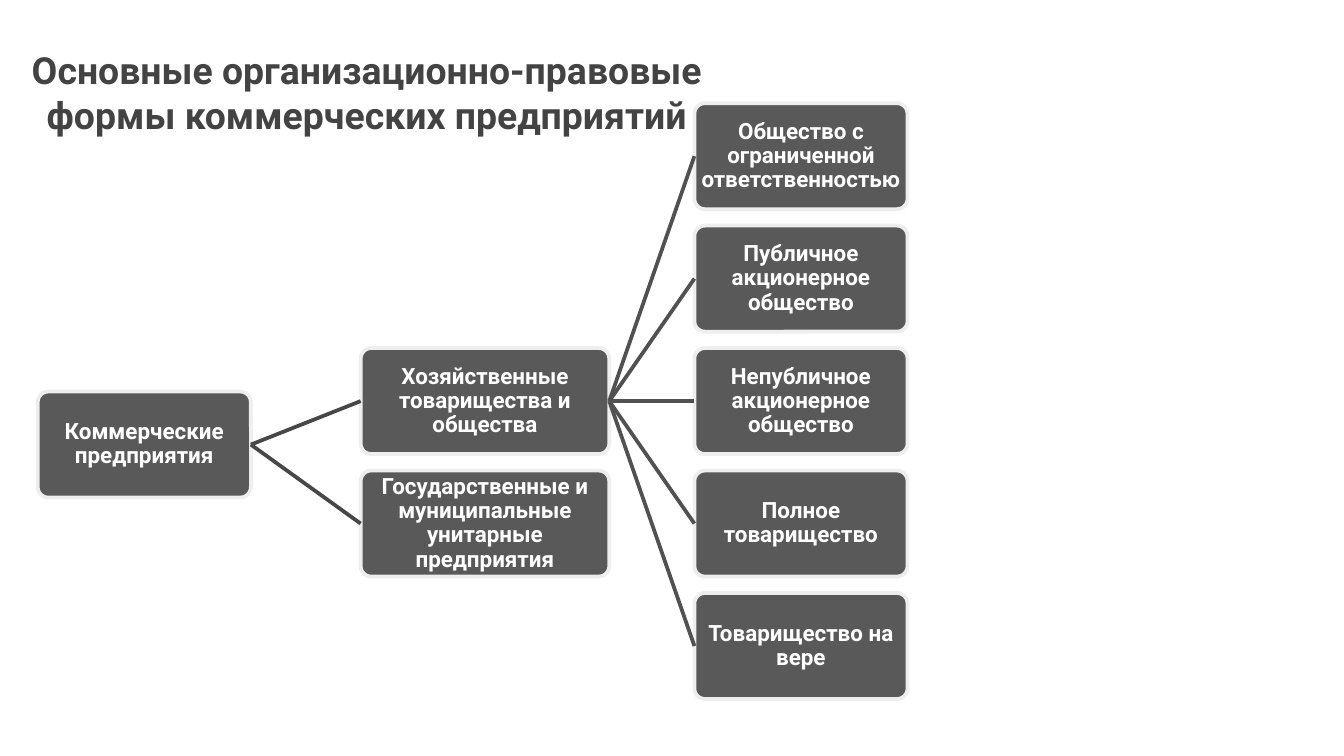
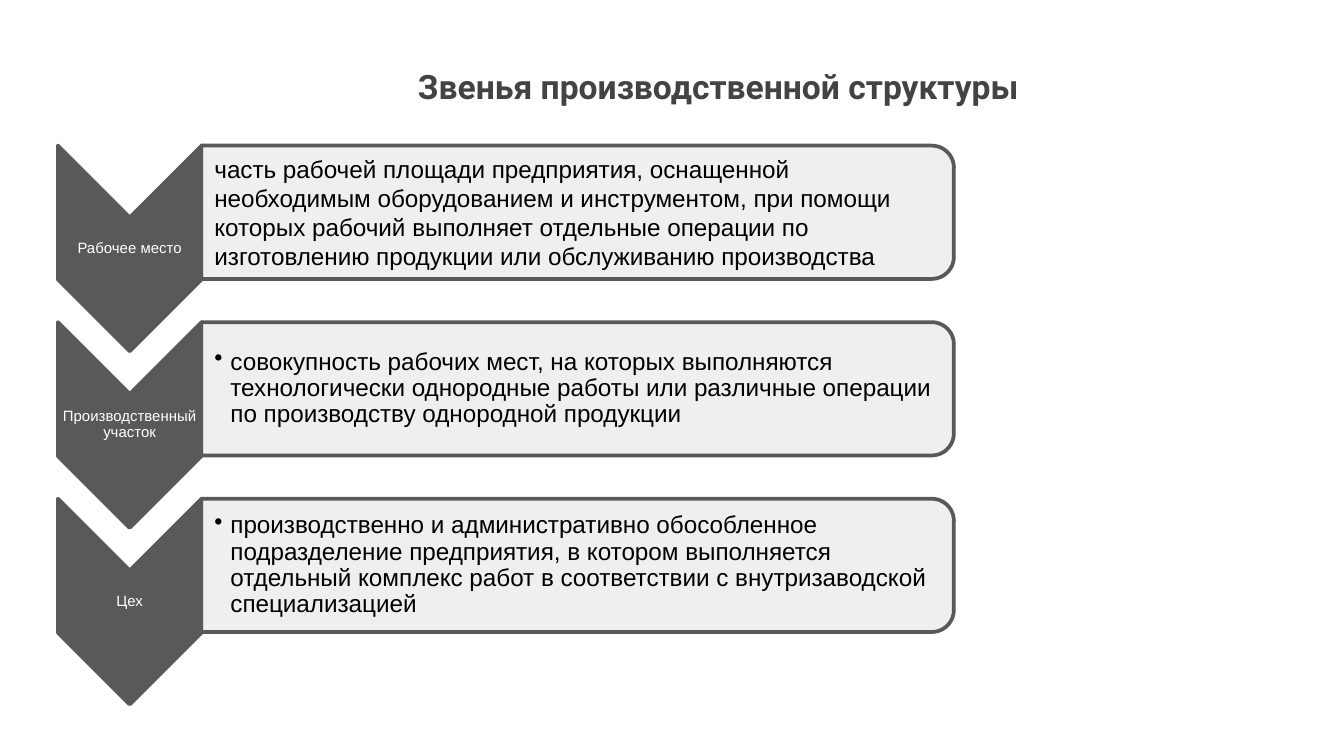
"""Builds two slides on the forms and the structure of enterprises."""
from dataclasses import dataclass

from lxml import etree
from pptx import Presentation
from pptx import util as u
from pptx.dml.color import RGBColor
from pptx.enum import shapes, text
from pptx.oxml import ns

Pt = u.Pt
Kind = shapes.MSO_SHAPE
Mid = text.PP_ALIGN.CENTER


@dataclass(frozen=True)
class Theme:
    dark: str = "595959"
    pale: str = "EEEEEE"
    head: str = "434343"
    ink: str = "000000"
    white: str = "FFFFFF"
    near: str = "474747"
    far: str = "515151"
    bold: str = "Roboto"
    plain: str = "Arial"
    node: int = 12
    body: int = 13
    tag: int = 8
    line: int = 2
    pad: float = 0.7
    tight: float = 0.9


def rgb(code):
    return RGBColor.from_string(code)


def sub(host, tag, **atts):
    return etree.SubElement(host, ns.qn(tag), **atts)


class Deck:
    def __init__(self, theme):
        self.theme = theme
        self.prs = Presentation()
        self.prs.slide_width, self.prs.slide_height = Pt(720), Pt(405)
        self.slide = None

    def font(self, para, face, size, color, bold=False):
        para.font.name, para.font.size = face, Pt(size)
        para.font.bold = bold
        para.font.color.rgb = rgb(color)

    def frame(self, shape, pad, left=None, anchor=text.MSO_ANCHOR.MIDDLE):
        tf = shape.text_frame
        tf.word_wrap = True
        tf.auto_size = text.MSO_AUTO_SIZE.NONE
        tf.vertical_anchor = anchor
        tf.margin_left = Pt(pad if left is None else left)
        tf.margin_right = tf.margin_top = tf.margin_bottom = Pt(pad)
        return tf.paragraphs[0]

    def page(self, title, size, x, y, w, h):
        self.slide = self.prs.slides.add_slide(self.prs.slide_layouts[5])
        head = self.slide.shapes.title
        head.left, head.top, head.width, head.height = map(Pt, (x, y, w, h))
        para = self.frame(head, 7.2, anchor=text.MSO_ANCHOR.TOP)
        para.text, para.alignment = title, Mid
        self.font(para, self.theme.bold, size, self.theme.head, True)

    def shape(self, kind, x, y, w, h, fill, line):
        item = self.slide.shapes.add_shape(kind, *map(Pt, (x, y, w, h)))
        item.shadow.inherit = False
        item.fill.solid()
        item.fill.fore_color.rgb = rgb(fill)
        item.line.color.rgb = rgb(line)
        item.line.width = Pt(self.theme.line)
        return item

    def turned(self, kind, x, y, w, h, fill):
        item = self.shape(kind, x + (w - h) / 2, y + (h - w) / 2, h, w,
                          fill, self.theme.dark)
        item.rotation = 90
        return item

    def node(self, words, x, y, w, h):
        th = self.theme
        item = self.shape(Kind.ROUNDED_RECTANGLE, x, y, w, h, th.dark, th.pale)
        item.adjustments[0] = 0.1
        para = self.frame(item, th.pad)
        para.text, para.alignment, para.line_spacing = words, Mid, th.tight
        self.font(para, th.bold, th.node, th.white, True)
        return item

    def link(self, start, end, color):
        wire = self.slide.shapes.add_connector(
            shapes.MSO_CONNECTOR.STRAIGHT, 0, 0, 0, 0)
        wire.begin_connect(start, 3)
        wire.end_connect(end, 1)
        wire.line.color.rgb = rgb(color)
        wire.line.width = Pt(self.theme.line)
        sub(wire.element.spPr, "a:effectLst")

    def box(self, words, x, y, w, h, left=None):
        item = self.slide.shapes.add_textbox(*map(Pt, (x, y, w, h)))
        para = self.frame(item, self.theme.pad, left)
        para.text = words
        return para

    def arrow(self, words, x, y, w, h, mid):
        th = self.theme
        self.turned(Kind.CHEVRON, x, y, w, h, th.dark)
        para = self.box(words, x, y + mid, w, 33)
        para.alignment, para.line_spacing = Mid, th.tight
        self.font(para, th.plain, th.tag, th.white)

    def bar(self, words, x, y, w, h, dot):
        th = self.theme
        item = self.turned(Kind.ROUND_2_SAME_RECTANGLE, x, y, w, h, th.pale)
        tint = item.element.xpath("./p:spPr/a:solidFill/a:srgbClr")[0]
        sub(tint, "a:alpha", val="90000")
        para = self.box(words, x, y, w - 3, h, 7.2)
        if dot:
            self.dot(para)
        self.font(para, th.plain, th.body, th.ink)

    def dot(self, para):
        para.level, para.line_spacing = 1, self.theme.tight
        props = para._p.get_or_add_pPr()
        props.set("marL", str(Pt(8.6)))
        props.set("indent", str(-Pt(8.6)))
        sub(sub(props, "a:buClr"), "a:srgbClr", val=self.theme.ink)
        sub(props, "a:buChar", char="•")


def forms(deck):
    deck.page("Основные организационно-правовые формы коммерческих предприятий",
              20, -8.6, 18, 410.4, 74)
    high, top, step = 56.8, 55.3, 65.6

    def stack(names, x, w, row):
        return [deck.node(name, x, top + (row + i) * step, w, high)
                for i, name in enumerate(names)]

    root = deck.node("Коммерческие предприятия", 20.2, 209.8, 114.2, high)
    groups = stack(["Хозяйственные товарищества и общества",
                    "Государственные и муниципальные унитарные предприятия"],
                   193.2, 133.2, 2)
    kinds = stack(["Общество с ограниченной ответственностью",
                   "Публичное акционерное общество",
                   "Непубличное акционерное общество",
                   "Полное товарищество",
                   "Товарищество на вере"], 372, 114.2, 0)
    for group in groups:
        deck.link(root, group, deck.theme.near)
    for kind in kinds:
        deck.link(groups[0], kind, deck.theme.far)


def links(deck):
    deck.page("Звенья производственной структуры", 18, 154.8, 28, 460, 39)
    rows = [
        ("Рабочее место",
         "часть рабочей площади предприятия, оснащенной необходимым "
         "оборудованием и инструментом, при помощи которых рабочий выполняет "
         "отдельные операции по изготовлению продукции или обслуживанию "
         "производства"),
        ("Производственный участок",
         "совокупность рабочих мест, на которых выполняются технологически "
         "однородные работы или различные операции по производству "
         "однородной продукции"),
        ("Цех",
         "производственно и административно обособленное подразделение "
         "предприятия, в котором выполняется отдельный комплекс работ в "
         "соответствии с внутризаводской специализацией"),
    ]
    for i, (name, words) in enumerate(rows):
        y = 78 + i * 94.6
        deck.arrow(name, 31, y, 77, 110.2, 38.6)
        deck.bar(words, 107.8, y, 403.2, 71.4, i > 0)


def main():
    deck = Deck(Theme())
    forms(deck)
    links(deck)
    deck.prs.save("out.pptx")


if __name__ == "__main__":
    main()
